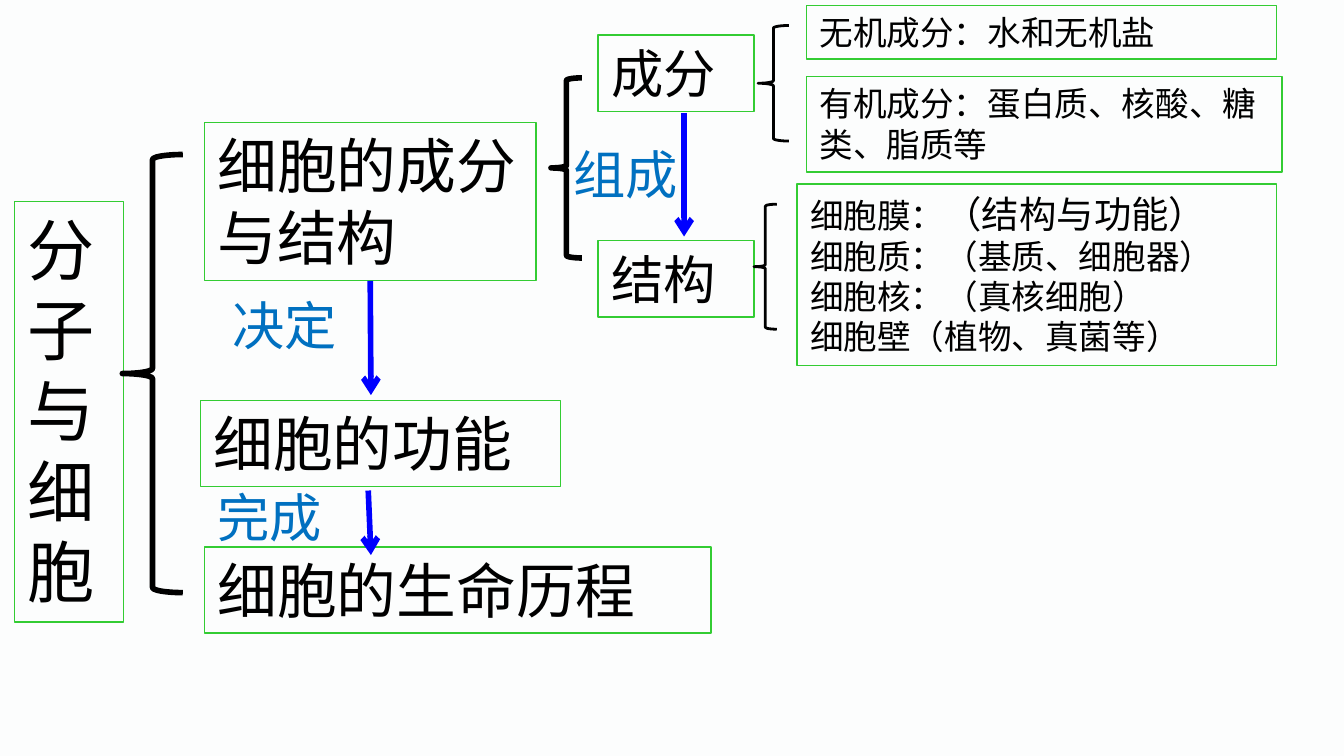
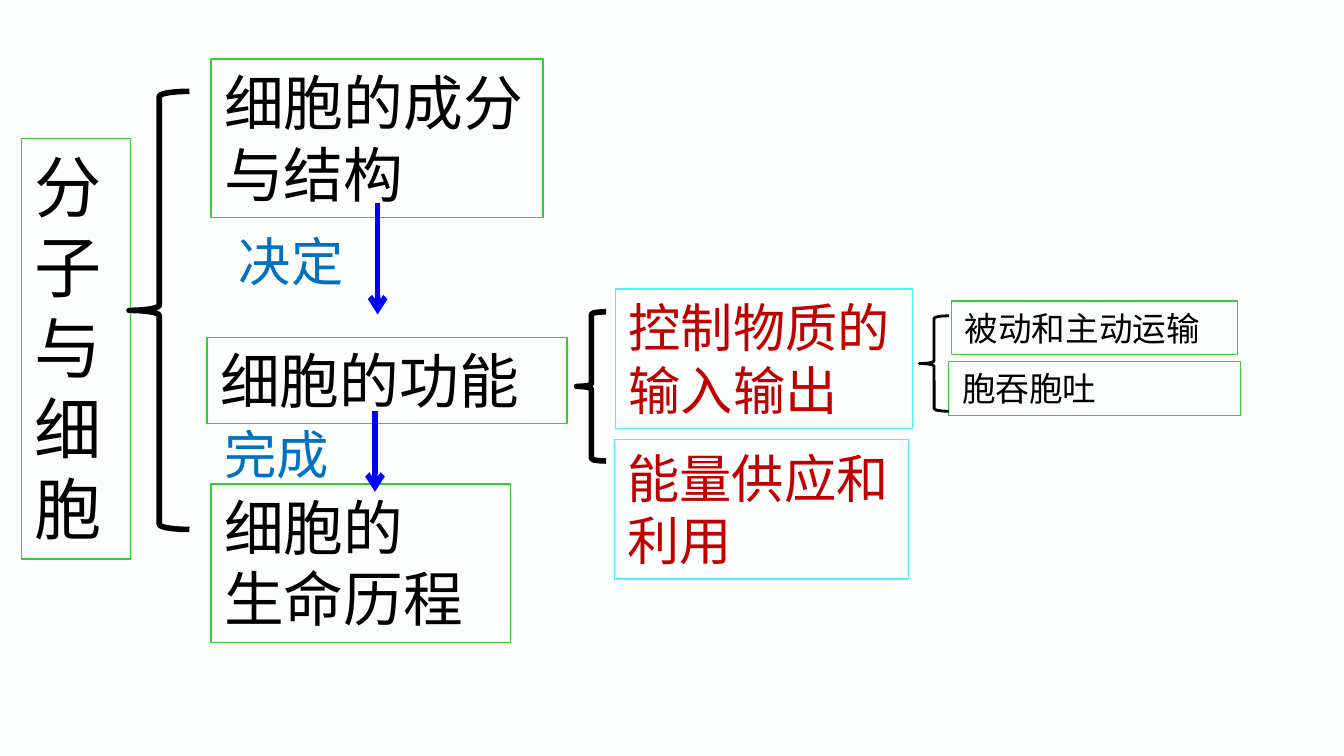
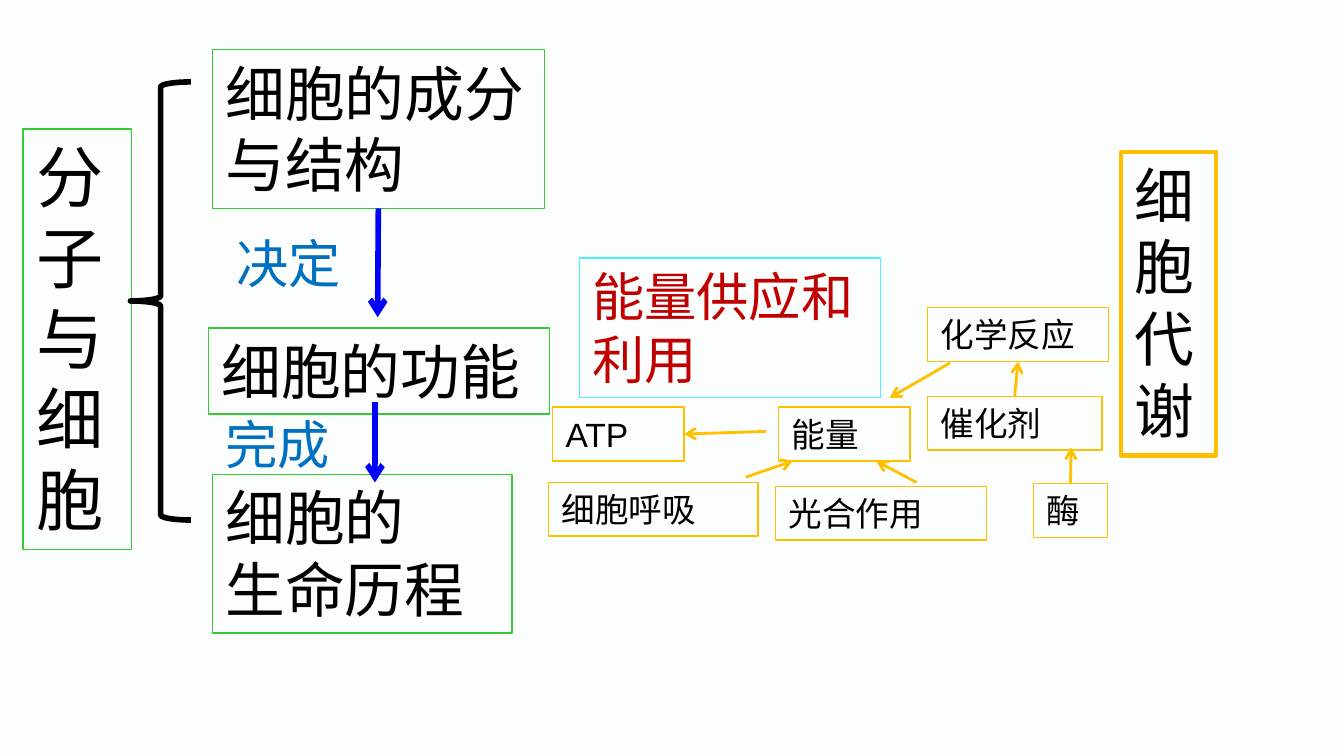
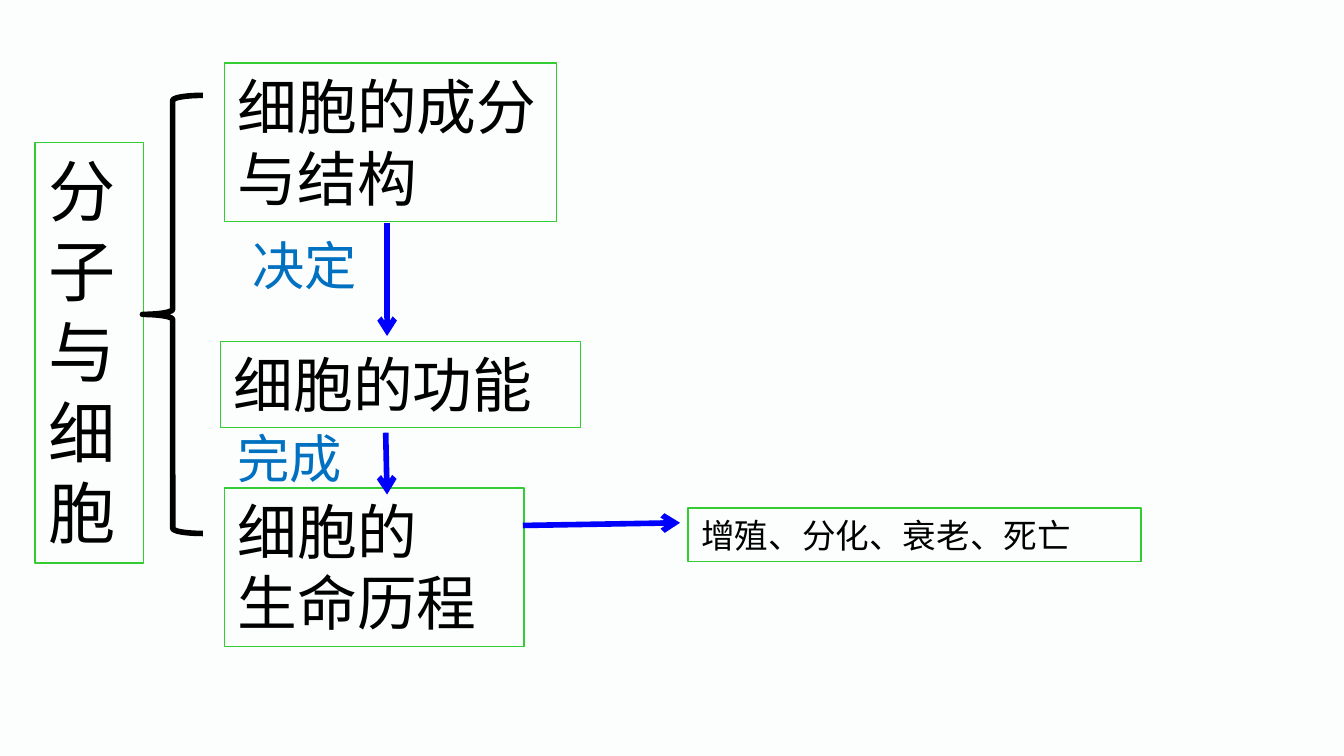
"""Builds four concept-map slides about molecules and cells."""
from dataclasses import dataclass
from typing import Optional

from lxml import etree
from pptx import Presentation
from pptx import util as u
from pptx.dml.color import RGBColor
from pptx.enum import shapes, text
from pptx.oxml.ns import qn

WIDTH = u.Inches(10)
HEIGHT = WIDTH * 9 // 16
COLUMNS = 100
CELL = WIDTH // COLUMNS
LATIN, CHINESE = "Arial", "Noto Sans CJK SC"
LINE_PITCH = 1.2
TOP, RIGHT, BOTTOM = 0, 3, 2
COLORS = {
    "paper": "FCFDFD", "ink": "000000", "green": "33CC33", "blue": "0000FF",
    "label": "0070C0", "cyan": "4DF1FC", "red": "C00000", "amber": "FFC000",
}


@dataclass
class Box:
    left: float
    top: float
    width: float
    height: float
    words: str
    size: int = 18
    line: Optional[str] = "green"
    color: str = "ink"
    weight: float = 0.75
    face: str = LATIN


@dataclass
class Brace:
    left: float
    top: float
    width: float
    height: float
    weight: float = 3


@dataclass
class Arrow:
    x1: float
    y1: float
    x2: float
    y2: float
    color: str = "blue"
    weight: float = 3


def cells(*counts: float) -> list:
    return [round(count * CELL) for count in counts]


def rgb(name: str) -> RGBColor:
    return RGBColor.from_string(COLORS[name])


def set_line(shape, color: str, weight: float) -> None:
    shape.line.color.rgb = rgb(color)
    shape.line.width = u.Pt(weight)


def style_span(span, size: int, color: str, face: str) -> None:
    span.font.size = u.Pt(size)
    span.font.color.rgb = rgb(color)
    span.font.name = face
    latin = span.font._element.find(qn("a:latin"))
    east_asian = etree.Element(qn("a:ea"), typeface=CHINESE)
    latin.addnext(east_asian)


def draw_box(page, item: Box):
    place = cells(item.left, item.top, item.width, item.height)
    if item.line:
        shape = page.shapes.add_shape(shapes.MSO_SHAPE.RECTANGLE, *place)
        shape.shadow.inherit = False
        shape.fill.background()
        set_line(shape, item.line, item.weight)
    else:
        shape = page.shapes.add_textbox(*place)
    frame = shape.text_frame
    frame.text = item.words
    frame.word_wrap = True
    frame.auto_size = text.MSO_AUTO_SIZE.SHAPE_TO_FIT_TEXT
    frame.vertical_anchor = text.MSO_ANCHOR.TOP
    for para in frame.paragraphs:
        para.alignment = text.PP_ALIGN.LEFT
        para.line_spacing = u.Pt(item.size * LINE_PITCH)
        for span in para.runs:
            style_span(span, item.size, item.color, item.face)
    return shape


def draw_brace(page, item: Brace) -> None:
    place = cells(item.left, item.top, item.width, item.height)
    shape = page.shapes.add_shape(shapes.MSO_SHAPE.LEFT_BRACE, *place)
    shape.shadow.inherit = False
    shape.fill.background()
    set_line(shape, "ink", item.weight)


def draw_arrow(page, item: Arrow):
    ends = cells(item.x1, item.y1, item.x2, item.y2)
    arrow = page.shapes.add_connector(shapes.MSO_CONNECTOR.STRAIGHT, *ends)
    set_line(arrow, item.color, item.weight)
    arrow.line._get_or_add_ln().append(etree.Element(qn("a:tailEnd"), type="arrow"))
    etree.SubElement(arrow._element.spPr, qn("a:effectLst"))
    return arrow


def draw_label(page, left: float, top: float, words: str) -> None:
    draw_box(page, Box(left, top, 11.6, 5.7, words, 28, None, "label"))


def draw_backbone(page, left: float, top: float, decides: Arrow, completes: Arrow,
                  life: str = "细胞的\n生命历程", life_size: tuple = (22.3, 11.8),
                  function_width: float = 26.8, decide_at: tuple = (15.2, 6.3),
                  joined: bool = False) -> None:
    draw_box(page, Box(left, top, 8.1, 31.3, "\n".join("分子与细胞"), 36))
    parts = draw_box(page, Box(left + 14.1, top - 5.9, 24.7, 11.8, "细胞的成分\n与结构", 32))
    draw_box(page, Box(left + 13.8, top + 14.8, function_width, 6.4, "细胞的功能", 32))
    draw_box(page, Box(left + 14.1, top + 25.7, *life_size, life, 32))
    draw_brace(page, Brace(left + 8, top - 3.5, 4.5, 32.6))
    arrow = draw_arrow(page, decides)
    if joined:
        arrow.begin_connect(parts, BOTTOM)
    draw_arrow(page, completes)
    draw_label(page, left + decide_at[0], top + decide_at[1], "决定")
    draw_label(page, left + 14.1, top + 20.6, "完成")


def build_structure(page) -> None:
    draw_backbone(page, 1.1, 15, Arrow(27.6, 21.1, 27.6, 29.4),
                  Arrow(27.4, 36.5, 27.6, 41.3), "细胞的生命历程", (37.7, 6.4), joined=True)
    for top, words in ((2.6, "成分"), (17.9, "结构")):
        draw_box(page, Box(44.5, top, 11.6, 5.7, words, 28))
    draw_box(page, Box(60, 0.4, 35, 4, "无机成分：水和无机盐"))
    draw_box(page, Box(60, 5.7, 35.4, 7.1, "有机成分：蛋白质、核酸、糖类、脂质等"))
    parts = draw_box(page, Box(59.3, 13.7, 35.7, 13.5,
                               "细胞膜：\n细胞质：（基质、细胞器）\n细胞核：（真核细胞）\n细胞壁（植物、真菌等）"))
    membrane = parts.text_frame.paragraphs[0]
    membrane.line_spacing = u.Pt(20 * LINE_PITCH)
    span = membrane.add_run()
    span.text = "（结构与功能）"
    style_span(span, 20, "ink", LATIN)
    draw_arrow(page, Arrow(50.9, 8.4, 50.9, 17.6))
    for brace in (Brace(41, 5.8, 2.3, 13.4), Brace(56.4, 1.9, 2.3, 8.6, 1.5),
                  Brace(56.1, 15.2, 1.7, 9.3, 1.5)):
        draw_brace(page, brace)
    draw_label(page, 41.7, 10.1, "组成")


def build_function(page) -> None:
    draw_backbone(page, 1.6, 10.3, Arrow(28.1, 15.1, 28.1, 23.4),
                  Arrow(27.9, 30.6, 27.9, 36.6))
    draw_box(page, Box(45.8, 21.5, 22.1, 10.4, "控制物质的输入输出", 28, "cyan", "red"))
    draw_box(page, Box(45.7, 32.7, 21.9, 10.4, "能量供应和利用", 28, "cyan", "red"))
    draw_box(page, Box(70.8, 22.4, 21.3, 4, "被动和主动运输"))
    draw_box(page, Box(70.6, 26.9, 21.7, 4, "胞吞胞吐"))
    draw_brace(page, Brace(42.9, 23.2, 2.2, 11.1))
    draw_brace(page, Brace(68.4, 23.5, 2.2, 7.1, 1.5))


def build_metabolism(page) -> None:
    draw_backbone(page, 1.7, 9.6, Arrow(28.1, 15.3, 28.1, 23.6),
                  Arrow(27.9, 29.9, 27.9, 35.9), function_width=25.4,
                  decide_at=(14.9, 7.1), joined=True)
    draw_box(page, Box(43.1, 19.2, 22.4, 10.4, "能量供应和利用", 28, "cyan", "red"))
    places = {
        "化学反应": (69, 22.9, 13.5), "催化剂": (69, 29.5, 13), "酶": (76.9, 36, 5.5),
        "能量": (57.9, 30.3, 9.8), "ATP": (41.1, 30.3, 9.8),
        "细胞呼吸": (40.8, 35.9, 15.6), "光合作用": (57.7, 36.2, 15.7),
    }
    boxes = {words: draw_box(page, Box(*place, 4, words, line="amber"))
             for words, place in places.items()}
    routes = ((75.5, 29.5, 75.7, 26.8), (79.7, 36, 79.7, 33.3), (57, 32.1, 50.9, 32.3),
              (70.7, 27, 66.2, 29.6), (55.5, 35.5, 59, 34.3), (68.2, 35.9, 65.2, 34.3))
    arrows = [draw_arrow(page, Arrow(*route, "amber", 1.5)) for route in routes]
    catalysis, enzyme, supply = arrows[:3]
    catalysis.begin_connect(boxes["催化剂"], TOP)
    catalysis.end_connect(boxes["化学反应"], BOTTOM)
    enzyme.begin_connect(boxes["酶"], TOP)
    supply.end_connect(boxes["ATP"], RIGHT)
    draw_box(page, Box(83.4, 11.3, 7.1, 22.6, "\n".join("细胞代谢"), 32,
                       "amber", weight=2.25, face=CHINESE))


def build_life(page) -> None:
    draw_backbone(page, 2.6, 10.6, Arrow(28.8, 16.6, 28.8, 25),
                  Arrow(28.7, 32.2, 28.8, 36.8))
    draw_box(page, Box(51.2, 37.8, 33.7, 4, "增殖、分化、衰老、死亡"))
    draw_arrow(page, Arrow(38.9, 39.1, 50.6, 38.9))


def main() -> None:
    deck = Presentation()
    deck.slide_width, deck.slide_height = WIDTH, HEIGHT
    for build in (build_structure, build_function, build_metabolism, build_life):
        page = deck.slides.add_slide(deck.slide_layouts[6])
        page.background.fill.solid()
        page.background.fill.fore_color.rgb = rgb("paper")
        build(page)
    deck.save("out.pptx")


if __name__ == "__main__":
    main()
